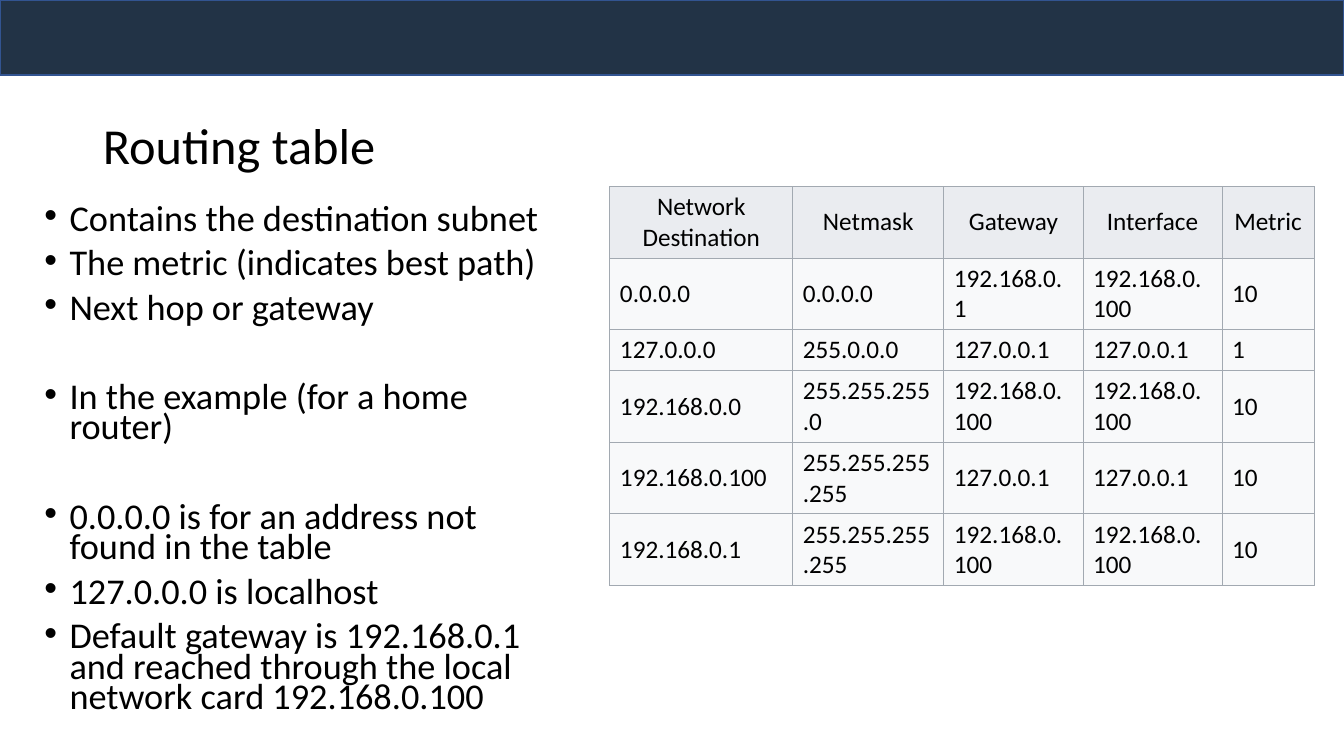
from lxml import etree
from pptx import Presentation
from pptx.dml.color import RGBColor
from pptx.enum.shapes import MSO_SHAPE
from pptx.enum.text import MSO_ANCHOR, MSO_AUTO_SIZE, PP_ALIGN
from pptx.oxml.ns import qn
from pptx.util import Inches, Pt

RECTANGLE = MSO_SHAPE.RECTANGLE
MIDDLE, TOP = MSO_ANCHOR.MIDDLE, MSO_ANCHOR.TOP
LEFT, CENTER = PP_ALIGN.LEFT, PP_ALIGN.CENTER
NO_AUTOFIT = MSO_AUTO_SIZE.NONE

COLORS = {
    "band": "223346", "band_line": "325491", "text": "000000",
    "header": "EAECF0", "cell": "F8F9FA", "border": "A2A9B1",
}

POINTS = [
    ("Contains the destination subnet", 0),
    ("The metric (indicates best path)", 10),
    ("Next hop or gateway", 10),
    ("In the example (for a home router)", 42),
    ("0.0.0.0 is for an address not found in the table", 42),
    ("127.0.0.0 is localhost", 10),
    ("Default gateway is 192.168.0.1 and reached through "
     "the local network card 192.168.0.100", 10),
]

ROUTES = [
    ("Network Destination", "Netmask", "Gateway", "Interface", "Metric"),
    ("0.0.0.0", "0.0.0.0", "192.168.0.1", "192.168.0.100", "10"),
    ("127.0.0.0", "255.0.0.0", "127.0.0.1", "127.0.0.1", "1"),
    ("192.168.0.0", "255.255.255.0", "192.168.0.100", "192.168.0.100", "10"),
    ("192.168.0.100", "255.255.255.255", "127.0.0.1", "127.0.0.1", "10"),
    ("192.168.0.1", "255.255.255.255", "192.168.0.100", "192.168.0.100", "10"),
]
ROUTE_COLUMNS = (13.6, 11.25, 10.35, 10.35, 6.85)
ROUTE_ROW = 4.13


def rgb(name):
    return RGBColor.from_string(COLORS[name])


def assign(target, **values):
    for attribute, value in values.items():
        setattr(target, attribute, value)


class Deck:
    """Draws styled elements on one slide, on a grid of 100 columns by 100 rows."""

    font = "Calibri"

    def __init__(self, width, height):
        self.presentation = Presentation()
        assign(self.presentation, slide_width=Inches(width), slide_height=Inches(height))
        self.column = self.presentation.slide_width / 100
        self.row = self.presentation.slide_height / 100
        self.slide = self.presentation.slides.add_slide(self.presentation.slide_layouts[1])

    def box(self, left, top, width, height):
        return (round(left * self.column), round(top * self.row),
                round(width * self.column), round(height * self.row))

    def add_text(self, paragraph, text, size, **layout):
        assign(paragraph, **layout)
        run = paragraph.add_run()
        run.text = text
        assign(run.font, name=self.font, size=Pt(size), bold=False)
        run.font.color.rgb = rgb("text")

    def place(self, holder, area, anchor):
        left, top, width, height = self.box(*area)
        assign(holder, left=left, top=top, width=width, height=height)
        assign(holder.text_frame, word_wrap=True, auto_size=NO_AUTOFIT,
               vertical_anchor=anchor)
        return holder.text_frame

    def band(self, *area):
        band = self.slide.shapes.add_shape(RECTANGLE, *self.box(*area))
        band.shadow.inherit = False
        band.fill.solid()
        band.fill.fore_color.rgb = rgb("band")
        band.line.color.rgb = rgb("band_line")
        band.line.width = Pt(1)

    def title(self, text, *area):
        frame = self.place(self.slide.shapes.title, area, MIDDLE)
        self.add_text(frame.paragraphs[0], text, 36, alignment=LEFT, line_spacing=0.9)

    def bullets(self, points, *area):
        frame = self.place(self.slide.placeholders[1], area, TOP)
        for index, (text, gap) in enumerate(points):
            paragraph = frame.add_paragraph() if index else frame.paragraphs[0]
            properties = paragraph._p.get_or_add_pPr()
            properties.set("marL", str(Inches(0.25)))
            properties.set("indent", str(-Inches(0.25)))
            self.add_text(paragraph, text, 25.9, line_spacing=0.7,
                          space_before=Pt(gap), space_after=Pt(0))

    def border(self, cell):
        properties = cell._tc.get_or_add_tcPr()
        for side in ("a:lnL", "a:lnR", "a:lnT", "a:lnB"):
            line = etree.SubElement(properties, qn(side), w=str(Pt(0.75)))
            fill = etree.SubElement(line, qn("a:solidFill"))
            etree.SubElement(fill, qn("a:srgbClr"), val=COLORS["border"])

    def table(self, rows, columns, row_height, left, top):
        area = self.box(left, top, sum(columns), row_height * len(rows))
        table = self.slide.shapes.add_table(len(rows), len(columns), *area).table
        assign(table, first_row=False, horz_banding=False)
        for column, width in zip(table.columns, columns):
            column.width = round(width * self.column)
        for row_index, row in enumerate(rows):
            look, alignment = ("cell", LEFT) if row_index else ("header", CENTER)
            for column_index, text in enumerate(row):
                cell = table.cell(row_index, column_index)
                cell.vertical_anchor = MIDDLE
                self.border(cell)
                cell.fill.solid()
                cell.fill.fore_color.rgb = rgb(look)
                self.add_text(cell.text_frame.paragraphs[0], text, 18, alignment=alignment)


def main():
    deck = Deck(13.33, 7.5)
    deck.band(0, 0, 100, 9.93)
    deck.title("Routing table", 6.9, 10, 86.25, 19.33)
    deck.bullets(POINTS, 2.55, 26.67, 40.65, 72)
    deck.table(ROUTES, ROUTE_COLUMNS, ROUTE_ROW, 45.38, 24.67)
    deck.presentation.save("out.pptx")


if __name__ == "__main__":
    main()
